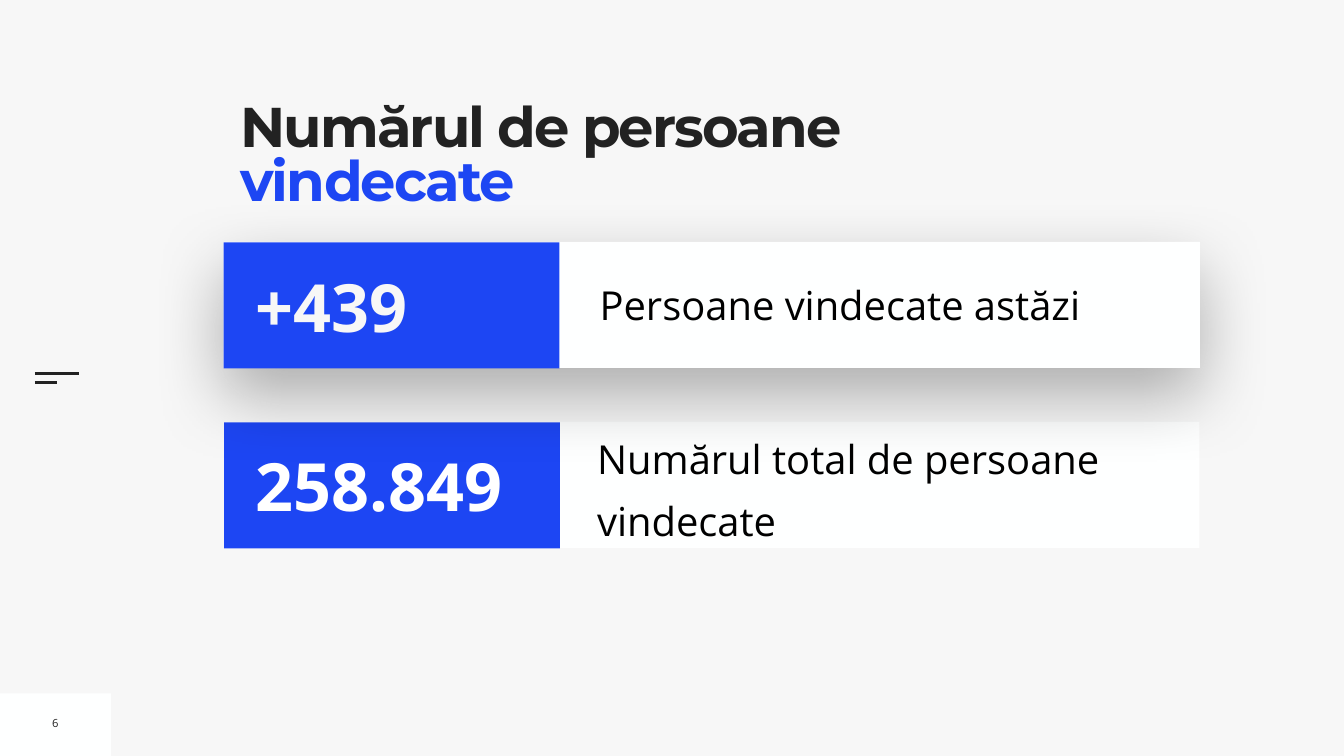
from dataclasses import dataclass

import pptx
import pptx.dml.color
import pptx.enum.shapes
import pptx.enum.text
import pptx.oxml
import pptx.oxml.ns
import pptx.util
from pptx.dml.color import RGBColor
from pptx.util import Inches, Pt

BLUE = RGBColor(0x1D, 0x46, 0xF3)
DARK = RGBColor(0x22, 0x22, 0x22)
BLACK = RGBColor(0, 0, 0)
PAPER = RGBColor(0xF7, 0xF7, 0xF7)
PANEL = RGBColor(0xFE, 0xFF, 0xFF)
WHITE = RGBColor(0xFF, 0xFF, 0xFF)

MIDDLE = pptx.enum.text.MSO_ANCHOR.MIDDLE
LEFT = pptx.enum.text.PP_ALIGN.LEFT
CENTER = pptx.enum.text.PP_ALIGN.CENTER

BAND_HEIGHT = 2.5
NUMBER_WIDTH = 6.66


@dataclass
class Area:
    left: float
    top: float
    width: float
    height: float

    def lengths(self) -> list:
        return [Inches(value) for value in (self.left, self.top, self.width, self.height)]


@dataclass
class Style:
    size: float
    color: RGBColor
    bold: bool = False
    font: str = "Open Sans"


@dataclass
class Band:
    area: Area
    number: str
    number_color: RGBColor
    label: str
    label_area: Area
    label_margin: float = 0.1
    line_spacing: float = 1.0
    raised: bool = False


def add_span(para, text: str, style: Style):
    span = para.add_run()
    span.text = text
    span.font.name = style.font
    span.font.size = Pt(style.size)
    span.font.bold = style.bold
    span.font.color.rgb = style.color
    return span


def add_panel(shapes, area: Area, color: RGBColor):
    panel = shapes.add_shape(pptx.enum.shapes.MSO_SHAPE.RECTANGLE, *area.lengths())
    panel.shadow.inherit = False
    panel.fill.solid()
    panel.fill.fore_color.rgb = color
    panel.line.fill.background()
    return panel


def set_margins(frame, margin: float) -> None:
    frame.margin_left = frame.margin_right = Inches(margin)
    frame.margin_top = frame.margin_bottom = Inches(margin)


def add_text(shapes, area: Area, text: str, style: Style, align=LEFT,
             margin: float = 0.1, wrap: bool = True):
    box = shapes.add_textbox(*area.lengths())
    frame = box.text_frame
    frame.word_wrap = wrap
    frame.vertical_anchor = MIDDLE
    set_margins(frame, margin)
    para = frame.paragraphs[0]
    para.alignment = align
    add_span(para, text, style)
    return para


def add_soft_shadow(shape) -> None:
    effects = shape._element.spPr.find(pptx.oxml.ns.qn("a:effectLst"))
    effects.append(pptx.oxml.parse_xml(
        f'<a:outerShdw {pptx.oxml.ns.nsdecls("a")} blurRad="{Pt(100)}" dist="{Pt(40)}" '
        'dir="5400000" rotWithShape="0"><a:srgbClr val="000000">'
        '<a:alpha val="30000"/></a:srgbClr></a:outerShdw>'))


def add_line(shapes, left: float, top: float, length: float) -> None:
    line = shapes.add_connector(pptx.enum.shapes.MSO_CONNECTOR.STRAIGHT, Inches(left),
                                Inches(top), Inches(left + length), Inches(top))
    line.line.color.rgb = DARK
    line.line.width = Pt(3)
    line._element.spPr.append(pptx.oxml.parse_xml(
        f'<a:effectLst {pptx.oxml.ns.nsdecls("a")}/>'))


def add_band(page, band: Band) -> None:
    shapes = page.shapes.add_group_shape().shapes
    area = band.area
    panel = add_panel(shapes, area, PANEL)
    if band.raised:
        add_soft_shadow(panel)
    para = add_text(shapes, band.label_area, band.label, Style(57, BLACK),
                    margin=band.label_margin)
    para.line_spacing = band.line_spacing
    if band.line_spacing > 1:
        para.space_before = Pt(20)
    add_panel(shapes, Area(area.left, area.top + 0.01, NUMBER_WIDTH, BAND_HEIGHT), BLUE)
    add_text(shapes, Area(area.left + 0.53, area.top + 0.36, 6.03, 1.8), band.number,
             Style(95, band.number_color, True))


def add_title(page) -> None:
    title = page.shapes.title
    title.left, title.top, title.width, title.height = Area(4.77, 2.07, 13.01, 2.73).lengths()
    title.fill.solid()
    title.fill.fore_color.rgb = PAPER
    frame = title.text_frame
    frame.word_wrap = True
    frame.auto_size = pptx.enum.text.MSO_AUTO_SIZE.NONE
    frame.vertical_anchor = pptx.enum.text.MSO_ANCHOR.TOP
    set_margins(frame, 0)
    para = frame.paragraphs[0]
    para.alignment = LEFT
    para.line_spacing = 0.8
    for text, color in (("Numărul de persoane ", DARK), ("vindecate", BLUE)):
        span = add_span(para, text, Style(80, color, True, "Montserrat"))
        span.font._element.set("spc", "-270")


# The raised band comes last so its shadow falls over the lower one
BANDS = [
    Band(Area(4.45, 8.37, 19.35, BAND_HEIGHT), "258.849", WHITE,
         "Numărul total de persoane vindecate", Area(11.85, 8.39, 11.95, 2.36),
         label_margin=0, line_spacing=1.3),
    Band(Area(4.44, 4.8, 19.37, BAND_HEIGHT), "+439", PAPER,
         "Persoane vindecate astăzi", Area(11.8, 5.47, 11.76, 1.16), raised=True),
]


def main() -> None:
    deck = pptx.Presentation()
    deck.slide_width, deck.slide_height = Inches(26.67), Inches(15)
    page = deck.slides.add_slide(deck.slide_layouts[5])
    page.background.fill.solid()
    page.background.fill.fore_color.rgb = PAPER

    # Title
    add_title(page)

    # Page corner and side mark
    add_panel(page.shapes, Area(0, 13.76, 2.2, 1.24), PANEL)
    add_line(page.shapes, 0.69, 7.41, 0.88)
    add_line(page.shapes, 0.69, 7.59, 0.44)
    add_text(page.shapes, Area(0.93, 14.09, 0.34, 0.51), "6", Style(16, DARK),
             align=CENTER, wrap=False)

    # Figures
    for band in BANDS:
        add_band(page, band)

    deck.save("out.pptx")


if __name__ == "__main__":
    main()
